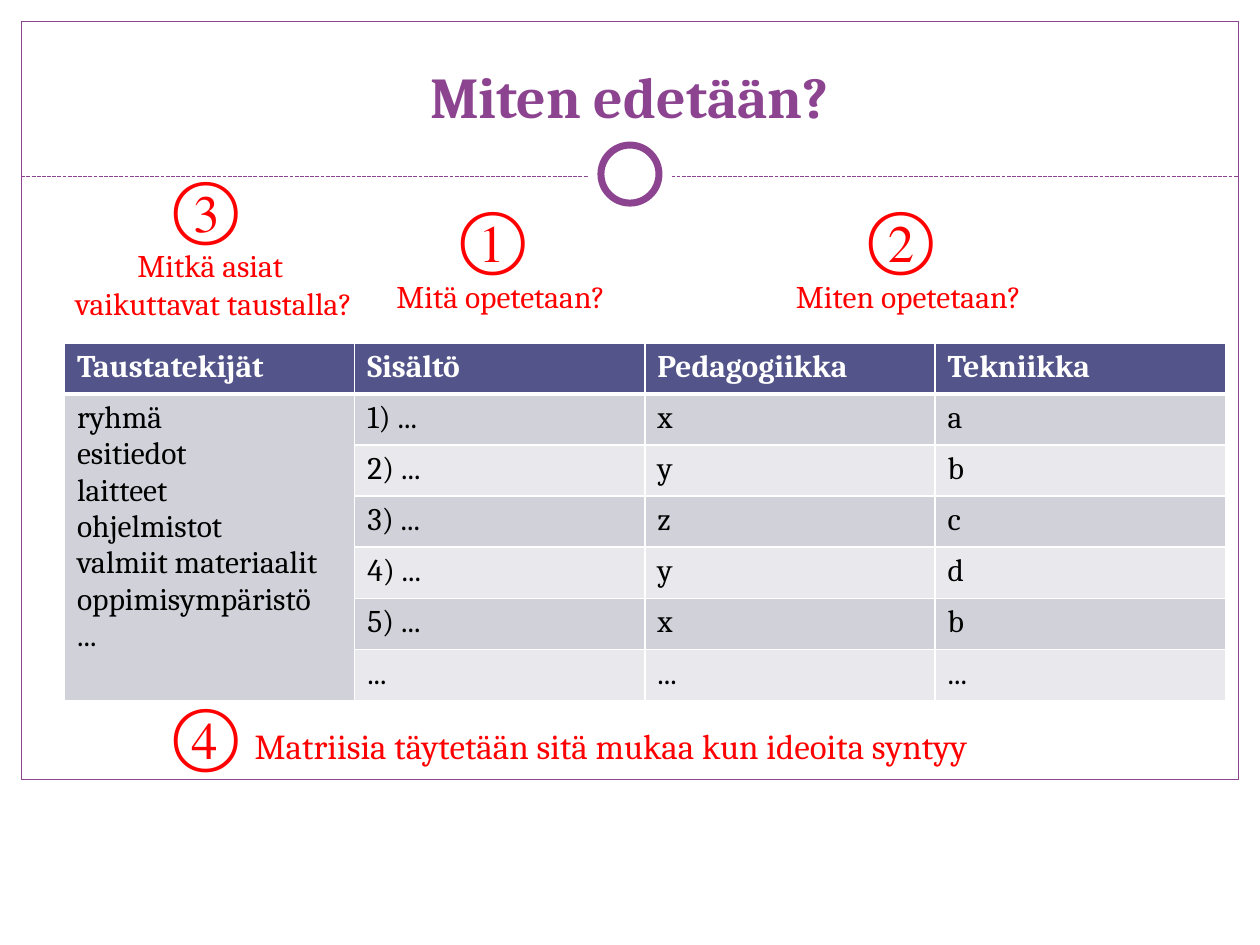
from lxml import etree
from pptx import Presentation
from pptx.dml.color import RGBColor
from pptx.enum.dml import MSO_LINE
from pptx.enum.shapes import MSO_CONNECTOR, MSO_SHAPE
from pptx.enum.text import MSO_ANCHOR, MSO_AUTO_SIZE, PP_ALIGN
from pptx.oxml.ns import qn
from pptx.util import Cm, Pt

PURPLE = RGBColor(0x8D, 0x44, 0x90)
RED = RGBColor(0xFF, 0x00, 0x00)
WHITE = RGBColor(0xFF, 0xFF, 0xFF)
BLACK = RGBColor(0x00, 0x00, 0x00)
HEADER = RGBColor(0x53, 0x54, 0x8A)
BAND_DARK = RGBColor(0xD1, 0xD1, 0xDA)
BAND_LIGHT = RGBColor(0xE9, 0xE9, 0xED)

FONT = "Cambria"
CENTER, LEFT = PP_ALIGN.CENTER, PP_ALIGN.LEFT
BOTTOM = MSO_ANCHOR.BOTTOM
NO_FIT, GROW = MSO_AUTO_SIZE.NONE, MSO_AUTO_SIZE.SHAPE_TO_FIT_TEXT
RECT, OVAL = MSO_SHAPE.RECTANGLE, MSO_SHAPE.OVAL
STRAIGHT, DASH = MSO_CONNECTOR.STRAIGHT, MSO_LINE.SQUARE_DOT

BACKGROUND_FACTORS = ["ryhmä", "esitiedot", "laitteet", "ohjelmistot",
                      "valmiit materiaalit", "oppimisympäristö", "..."]
TABLE_ROWS = [
    ["Taustatekijät", "Sisältö", "Pedagogiikka", "Tekniikka"],
    ["\n".join(BACKGROUND_FACTORS), "1) ...", "x", "a"],
    ["", "2) ...", "y", "b"],
    ["", "3) ...", "z", "c"],
    ["", "4) ...", "y", "d"],
    ["", "5) ...", "x", "b"],
    ["", "...", "...", "..."],
]
STEPS = [
    ("① ", "\nMitä opetetaan?", 18, (7.54, 3.76, 5.11, 2.74)),
    ("② ", "\nMiten opetetaan?", 18, (15.57, 3.76, 5.49, 2.74)),
    ("③ ", "\nMitkä asiat \nvaikuttavat taustalla?", 18, (1.02, 3.15, 6.58, 3.51)),
    ("④ ", "Matriisia täytetään sitä mukaa kun ideoita syntyy", 20,
     (2.69, 13.77, 17.63, 1.96)),
]


def add_text(tf, text, size=18, color=BLACK, bold=False, align=LEFT):
    """Append text to the last paragraph; each newline starts another one."""
    for i, line in enumerate(text.split("\n")):
        p = tf.add_paragraph() if i else tf.paragraphs[-1]
        p.alignment = align
        if line:
            r = p.add_run()
            r.text = line
            r.font.name = FONT
            r.font.size = Pt(size)
            r.font.bold = bold
            r.font.color.rgb = color


def add_outline(s, kind, box, fill=None, line=None, width=0.75):
    sp = s.shapes.add_shape(kind, *map(Cm, box))
    sp.shadow.inherit = False
    if fill is None:
        sp.fill.background()
    else:
        sp.fill.solid()
        sp.fill.fore_color.rgb = fill
    if line is None:
        sp.line.fill.background()
    else:
        sp.line.color.rgb = line
        sp.line.width = Pt(width)


def add_frame(s, x, y, w, h):
    """Page border with a dashed rule and a ring in the middle of the rule."""
    add_outline(s, RECT, (x, y, w, h), line=PURPLE)
    rule_y = y + 3.13
    rule = s.shapes.add_connector(STRAIGHT, Cm(x), Cm(rule_y), Cm(x + w), Cm(rule_y))
    rule.line.color.rgb = PURPLE
    rule.line.width = Pt(0.75)
    rule.line.dash_style = DASH
    etree.SubElement(rule._element.spPr, qn("a:effectLst"))
    center_x, center_y = x + w / 2, y + 3.08
    for size, line in ((1.7, None), (1.17, PURPLE)):
        box = (center_x - size / 2, center_y - size / 2, size, size)
        add_outline(s, OVAL, box, fill=WHITE, line=line, width=4)


def add_title(s, text, box):
    title = s.shapes.title
    title.left, title.top, title.width, title.height = map(Cm, box)
    tf = title.text_frame
    tf.auto_size = NO_FIT
    tf.vertical_anchor = BOTTOM
    add_text(tf, text, size=33, color=PURPLE, bold=True, align=CENTER)


def set_borders(cell, bottom):
    tcPr = cell._tc.get_or_add_tcPr()
    for side, width in (("L", 1), ("R", 1), ("T", 1), ("B", bottom)):
        ln = etree.SubElement(tcPr, qn(f"a:ln{side}"), w=str(Pt(width)))
        fill = etree.SubElement(ln, qn("a:solidFill"))
        etree.SubElement(fill, qn("a:srgbClr"), val=str(WHITE))


def add_matrix(s, rows, x, y, w, h):
    n_rows, n_cols = len(rows), len(rows[0])
    table = s.shapes.add_table(n_rows, n_cols, *map(Cm, (x, y, w, h))).table
    for column in table.columns:
        column.width = Cm(w / n_cols)
    for i, row in enumerate(rows):
        table.rows[i].height = Cm(h / n_rows)
        for j, text in enumerate(row):
            cell = table.cell(i, j)
            is_header = i == 0
            set_borders(cell, bottom=3 if is_header else 1)
            cell.fill.solid()
            band = BAND_DARK if i % 2 else BAND_LIGHT
            cell.fill.fore_color.rgb = HEADER if is_header else band
            add_text(cell.text_frame, text, bold=is_header,
                     color=WHITE if is_header else BLACK)
    table.cell(1, 0).merge(table.cell(n_rows - 1, 0))


def add_step(s, number, label, size, box):
    tf = s.shapes.add_textbox(*map(Cm, box)).text_frame
    tf.word_wrap = False
    tf.auto_size = GROW
    add_text(tf, number, size=40, color=RED, align=CENTER)
    add_text(tf, label, size=size, color=RED, align=CENTER)


def main():
    prs = Presentation()
    prs.slide_width, prs.slide_height = Cm(25.4), Cm(19.05)
    s = prs.slides.add_slide(prs.slide_layouts[5])
    add_frame(s, 0.43, 0.43, 24.54, 15.29)
    add_matrix(s, TABLE_ROWS, 1.3, 6.91, 23.4, 7.21)
    for step in STEPS:
        add_step(s, *step)
    add_title(s, "Miten edetään?", (0.84, 0.64, 23.7, 2.11))
    prs.save("out.pptx")


if __name__ == "__main__":
    main()
